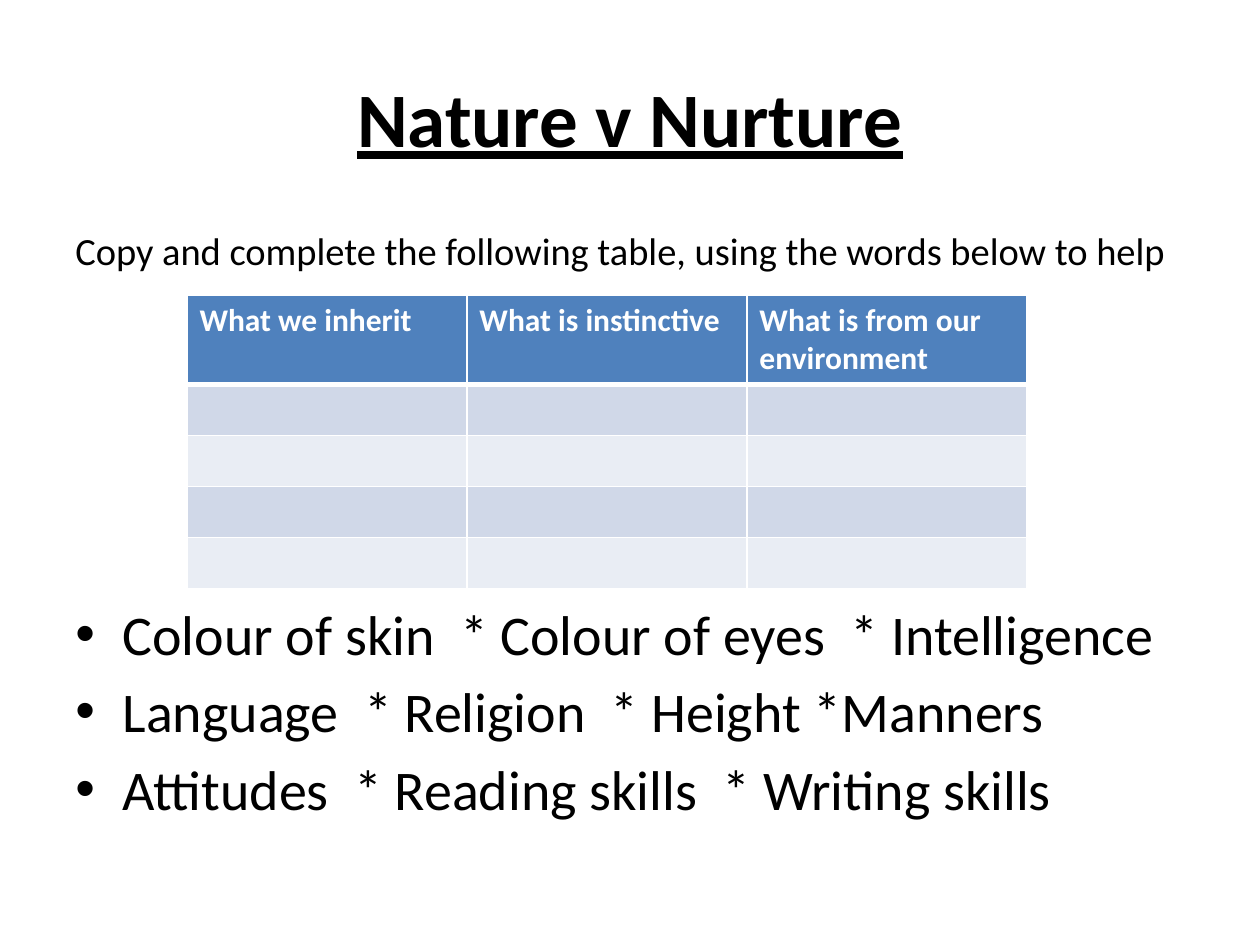
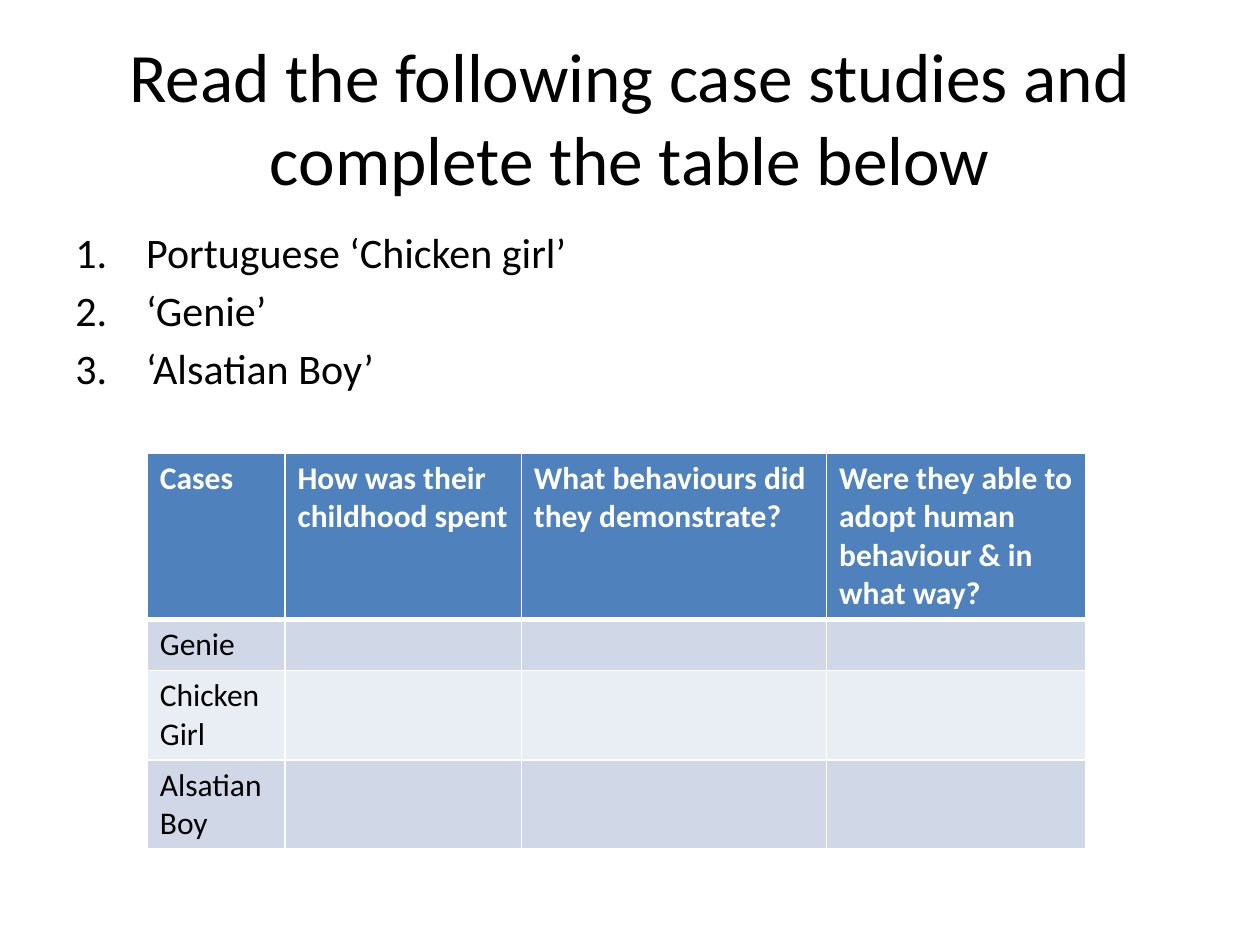
from dataclasses import dataclass

from lxml.etree import SubElement
from pptx import Presentation
from pptx.dml.color import RGBColor
from pptx.enum.text import MSO_ANCHOR, PP_ALIGN
from pptx.oxml.ns import qn
from pptx.util import Pt

FONT = "Calibri"
BLACK, WHITE = "000000", "FFFFFF"
HEADER_FILL = "4F81BD"
BAND_FILLS = ("D0D8E8", "E9EDF4")
MARGIN, CONTENT_WIDTH = 36, 648
BODY_TOP = 126
ROW_HEIGHT, TWO_LINE_ROW, FOUR_LINE_ROW = 29.2, 51.1, 95.1


@dataclass(frozen=True)
class Marker:
    tag: str
    attribute: str
    value: str
    indent: float


@dataclass(frozen=True)
class Worksheet:
    left: float
    top: float
    widths: tuple[float, ...]
    heights: tuple[float, ...]
    headings: tuple[str, ...]
    cases: tuple[str, ...] = ()


DOT = Marker("a:buChar", "char", "•", 27)
NUMBER = Marker("a:buAutoNum", "type", "arabicPeriod", 40.5)

INHERITANCE = Worksheet(
    106.8, 168.5, (160,) * 3, (TWO_LINE_ROW,) + (ROW_HEIGHT,) * 4,
    ("What we inherit", "What is instinctive", "What is from our environment"),
)
CASE_STUDIES = Worksheet(
    84.2, 258.8, (78.7, 135, 174.5, 148),
    (FOUR_LINE_ROW, ROW_HEIGHT, TWO_LINE_ROW, TWO_LINE_ROW),
    ("Cases", "How was their childhood spent", "What behaviours did they demonstrate?",
     "Were they able to adopt human behaviour & in what way?"),
    ("Genie", "Chicken Girl", "Alsatian Boy"),
)


def rgb(value: str) -> RGBColor:
    return RGBColor.from_string(value)


def mark(paragraph, marker: Marker) -> None:
    properties = paragraph._p.get_or_add_pPr()
    properties.set("marL", str(Pt(marker.indent)))
    properties.set("indent", str(-Pt(marker.indent)))
    SubElement(properties, qn("a:buFont"), typeface="Arial" if marker is DOT else "+mj-lt")
    SubElement(properties, qn(marker.tag), {marker.attribute: marker.value})


def write(frame, *lines: str, size: float, color: str = BLACK, bold: bool = False,
          underline: bool = False, align=PP_ALIGN.LEFT, gap: float = 0,
          marker: Marker | None = None) -> None:
    frame.word_wrap = True
    for index, line in enumerate(lines):
        paragraph = frame.add_paragraph() if index else frame.paragraphs[0]
        paragraph.alignment = align
        paragraph.space_before = Pt(gap)
        if marker:
            mark(paragraph, marker)
        run = paragraph.add_run()
        run.text = line
        font = run.font
        font.name, font.size, font.bold, font.underline = FONT, Pt(size), bold, underline
        font.color.rgb = rgb(color)


def add_block(slide, top: float, height: float):
    return slide.shapes.add_textbox(
        Pt(MARGIN), Pt(top), Pt(CONTENT_WIDTH), Pt(height)).text_frame


def add_title(slide, title: str, size: float, emphasis: bool = False) -> None:
    frame = add_block(slide, 21.6, 90)
    frame.vertical_anchor = MSO_ANCHOR.MIDDLE
    write(frame, title, size=size, bold=emphasis, underline=emphasis, align=PP_ALIGN.CENTER)


def add_borders(cell, row: int) -> None:
    properties = cell._tc.get_or_add_tcPr()
    for side in ("L", "R", "T", "B"):
        heavy = (row, side) in ((0, "B"), (1, "T"))
        line = SubElement(properties, qn(f"a:ln{side}"), w=str(Pt(3 if heavy else 1)))
        SubElement(SubElement(line, qn("a:solidFill")), qn("a:srgbClr"), val=WHITE)


def add_worksheet(slide, sheet: Worksheet) -> None:
    table = slide.shapes.add_table(
        len(sheet.heights), len(sheet.widths), Pt(sheet.left), Pt(sheet.top),
        Pt(sum(sheet.widths)), Pt(sum(sheet.heights))).table
    for column, width in zip(table.columns, sheet.widths):
        column.width = Pt(width)
    for row_index, height in enumerate(sheet.heights):
        row = table.rows[row_index]
        row.height = Pt(height)
        fill = BAND_FILLS[(row_index - 1) % 2] if row_index else HEADER_FILL
        for cell in row.cells:
            add_borders(cell, row_index)
            cell.fill.solid()
            cell.fill.fore_color.rgb = rgb(fill)
    for column, heading in enumerate(sheet.headings):
        write(table.cell(0, column).text_frame, heading, size=18, color=WHITE, bold=True)
    for row_index, case in enumerate(sheet.cases, 1):
        write(table.cell(row_index, 0).text_frame, case, size=18)


def add_nature_slide(slide) -> None:
    add_title(slide, "Nature v Nurture", 44, emphasis=True)
    write(add_block(slide, BODY_TOP, 36),
          "Copy and complete the following table, using the words below to help", size=22)
    write(add_block(slide, 339, 143),
          "Colour of skin  * Colour of eyes  * Intelligence",
          "Language  * Religion  * Height *Manners",
          "Attitudes  * Reading skills  * Writing skills",
          size=32, gap=5.8, marker=DOT)
    add_worksheet(slide, INHERITANCE)


def add_cases_slide(slide) -> None:
    add_title(slide, "Read the following case studies and complete the table below", 39.6)
    write(add_block(slide, BODY_TOP, 110),
          "Portuguese ‘Chicken girl’", "‘Genie’", "‘Alsatian Boy’",
          size=24, gap=4.4, marker=NUMBER)
    add_worksheet(slide, CASE_STUDIES)


def main() -> None:
    deck = Presentation()
    deck.slide_width, deck.slide_height = Pt(720), Pt(540)
    for fill_slide in (add_nature_slide, add_cases_slide):
        fill_slide(deck.slides.add_slide(deck.slide_layouts[6]))
    deck.save("out.pptx")


if __name__ == "__main__":
    main()
